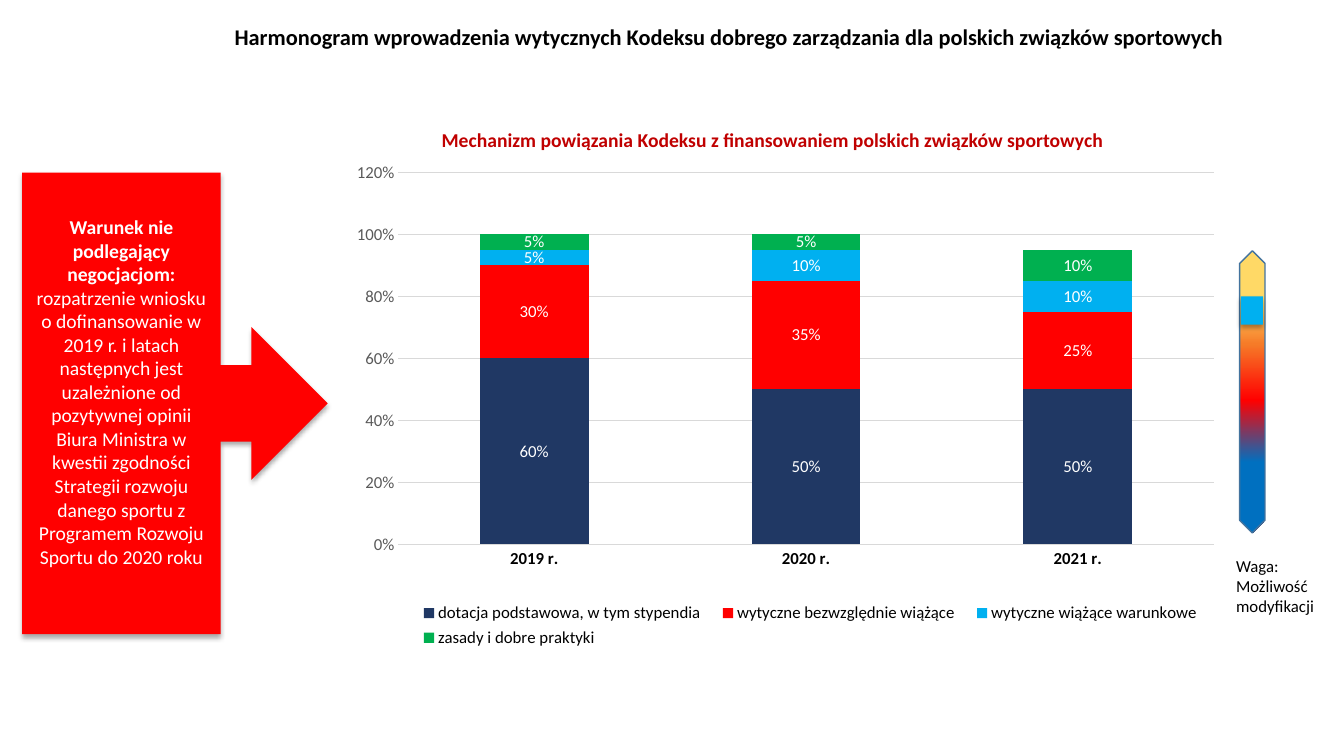
from pptx import Presentation
from pptx.chart.data import CategoryChartData
from pptx.dml.color import RGBColor
from pptx.enum.chart import XL_CHART_TYPE, XL_LEGEND_POSITION, XL_TICK_MARK
from pptx.enum.shapes import MSO_SHAPE
from pptx.enum.text import MSO_ANCHOR, PP_ALIGN
from pptx.oxml import parse_xml
from pptx.oxml.ns import nsdecls, qn
from pptx.util import Cm, Pt

STACKED = XL_CHART_TYPE.COLUMN_STACKED
LEGEND_BOTTOM = XL_LEGEND_POSITION.BOTTOM
NO_TICK = XL_TICK_MARK.NONE
CALLOUT = MSO_SHAPE.RIGHT_ARROW_CALLOUT
DOUBLE_ARROW = MSO_SHAPE.UP_DOWN_ARROW
RECTANGLE = MSO_SHAPE.RECTANGLE
MIDDLE = MSO_ANCHOR.MIDDLE
CENTER = PP_ALIGN.CENTER

FONT = "Calibri"
BLACK, WHITE, RED, BLUE = "000000", "FFFFFF", "FF0000", "00B0F0"
GRID = "D9D9D9"

YEARS = ["2019 r.", "2020 r.", "2021 r."]
SHARES = [
    ("dotacja podstawowa, w tym stypendia", "203864", (0.6, 0.5, 0.5)),
    ("wytyczne bezwzględnie wiążące", RED, (0.3, 0.35, 0.25)),
    ("wytyczne wiążące warunkowe", BLUE, (0.05, 0.1, 0.1)),
    ("zasady i dobre praktyki", "00B050", (0.05, 0.05, 0.1)),
]
WEIGHT_STOPS = [(18, "FFD966"), (33, "F67B28"), (53, RED), (75, "0070C0")]


def color(hex_string):
    return RGBColor.from_string(hex_string)


def style_font(font, size, hex_color, bold=False):
    font.name = FONT
    font.size = Pt(size)
    font.bold = bold
    font.color.rgb = color(hex_color)


def add_span(para, text, size, hex_color, bold=False):
    span = para.add_run()
    span.text = text
    style_font(span.font, size, hex_color, bold)


def place(shape, left, top, width, height):
    shape.left, shape.top = Cm(left), Cm(top)
    shape.width, shape.height = Cm(width), Cm(height)


def add_title(page, text):
    title = page.shapes.title
    place(title, 3.25, 0.25, 30.25, 1.42)
    title.text_frame.vertical_anchor = MIDDLE
    title.text_frame.word_wrap = True
    para = title.text_frame.paragraphs[0]
    para.alignment = CENTER
    para.line_spacing = 0.9
    add_span(para, text, 16, BLACK, True)


def add_text(page, bounds, lines, size, hex_color, bold=False):
    box = page.shapes.add_textbox(*map(Cm, bounds))
    frame = box.text_frame
    frame.word_wrap = True
    for index, line in enumerate(lines):
        para = frame.add_paragraph() if index else frame.paragraphs[0]
        add_span(para, line, size, hex_color, bold)


def add_block(page, kind, bounds, fill):
    """Solid shape without outline, with a soft shadow below it."""
    block = page.shapes.add_shape(kind, *map(Cm, bounds))
    block.fill.solid()
    block.fill.fore_color.rgb = color(fill)
    block.line.fill.background()
    block._element.spPr.append(parse_xml(
        f'<a:effectLst {nsdecls("a")}>'
        '<a:outerShdw blurRad="44450" dist="27940" dir="5400000" rotWithShape="0">'
        '<a:srgbClr val="000000"><a:alpha val="32000"/></a:srgbClr>'
        '</a:outerShdw></a:effectLst>'))
    return block


def add_condition(page):
    callout = add_block(page, CALLOUT, (0.56, 4.35, 7.7, 11.63), RED)
    frame = callout.text_frame
    frame.word_wrap = True
    frame.vertical_anchor = MIDDLE
    frame.margin_bottom = Cm(0.72)
    para = frame.paragraphs[0]
    para.alignment = CENTER
    add_span(para, "Warunek nie podlegający negocjacjom: ", 14, WHITE, True)
    add_span(para, "rozpatrzenie wniosku o dofinansowanie w 2019 r. i latach "
             "następnych jest uzależnione od pozytywnej opinii Biura Ministra "
             "w kwestii zgodności Strategii rozwoju danego sportu z Programem "
             "Rozwoju Sportu do 2020 roku", 14, WHITE)


def add_weight_arrow(page):
    arrow = page.shapes.add_shape(DOUBLE_ARROW, *map(Cm, (31.24, 6.32, 0.64, 7.11)))
    arrow.shadow.inherit = False
    arrow.adjustments[0], arrow.adjustments[1] = 0.5, 1.02
    arrow.line.color.rgb = color("43739E")
    arrow.line.width = Pt(1)
    stops = "".join(f'<a:gs pos="{percent * 1000}"><a:srgbClr val="{tone}"/></a:gs>'
                    for percent, tone in WEIGHT_STOPS)
    arrow._element.spPr.find(qn("a:prstGeom")).addnext(parse_xml(
        f'<a:gradFill {nsdecls("a")} rotWithShape="1"><a:gsLst>{stops}</a:gsLst>'
        '<a:lin ang="5400000" scaled="0"/></a:gradFill>'))


def set_layout(element, index, x, y, width, height, inner=False):
    """Fix the place of a chart part, in fractions of the chart."""
    for old in element.findall(qn("c:layout")):
        element.remove(old)
    target = '<c:layoutTarget val="inner"/>' if inner else ""
    element.insert(index, parse_xml(
        f'<c:layout {nsdecls("c")}><c:manualLayout>{target}'
        '<c:xMode val="edge"/><c:yMode val="edge"/>'
        f'<c:x val="{x}"/><c:y val="{y}"/><c:w val="{width}"/><c:h val="{height}"/>'
        '</c:manualLayout></c:layout>'))


def style_axes(chart):
    years, percents = chart.category_axis, chart.value_axis
    for axis in (years, percents):
        axis.major_tick_mark = axis.minor_tick_mark = NO_TICK
    style_font(years.tick_labels.font, 12, BLACK, True)
    years.format.line.color.rgb = color(GRID)
    years.format.line.width = Pt(0.75)

    style_font(percents.tick_labels.font, 12, "595959")
    percents.tick_labels.number_format = "0%"
    percents.tick_labels.number_format_is_linked = False
    percents.minimum_scale, percents.maximum_scale = 0, 1.2
    percents.major_unit = 0.2
    percents.format.line.fill.background()
    percents.major_gridlines.format.line.color.rgb = color(GRID)
    percents.major_gridlines.format.line.width = Pt(0.75)


def add_share_chart(page):
    data = CategoryChartData(number_format="0%")
    data.categories = YEARS
    for name, _, values in SHARES:
        data.add_series(name, values)
    bounds = map(Cm, (8.46, 3.53, 22.58, 13.59))
    chart = page.shapes.add_chart(STACKED, *bounds, data).chart
    chart.has_title = False
    style_font(chart.font, 10, BLACK)
    style_axes(chart)

    # Stacked columns and their labels
    plot = chart.plots[0]
    plot.gap_width, plot.overlap = 150, 100
    plot.vary_by_categories = False
    for series, (_, fill, _) in zip(plot.series, SHARES):
        series.format.fill.solid()
        series.format.fill.fore_color.rgb = color(fill)
        labels = series.data_labels
        labels.show_value = True
        labels.number_format = "0%"
        labels.number_format_is_linked = False
        style_font(labels.font, 12, WHITE)
    set_layout(plot._element.getparent(), 0, 0.07, 0.06, 0.91, 0.69, inner=True)

    # Legend
    chart.has_legend = True
    chart.legend.position = LEGEND_BOTTOM
    chart.legend.include_in_layout = False
    style_font(chart.legend.font, 12, BLACK)
    set_layout(chart.legend._element, 1, 0.08, 0.85, 0.9, 0.1)


def main():
    deck = Presentation()
    deck.slide_width, deck.slide_height = Cm(33.87), Cm(19.05)
    page = deck.slides.add_slide(deck.slide_layouts[5])

    # Headings
    add_title(page, "Harmonogram wprowadzenia wytycznych Kodeksu dobrego "
              "zarządzania dla polskich związków sportowych")
    add_text(page, (10.88, 3.1, 17.9, 0.86),
             ["Mechanizm powiązania Kodeksu z finansowaniem polskich związków sportowych"],
             14, "C00000", True)

    # Chart and the condition leading to it
    add_share_chart(page)
    add_condition(page)

    # Weight scale
    add_weight_arrow(page)
    add_block(page, RECTANGLE, (31.27, 7.47, 0.56, 0.71), BLUE)
    add_text(page, (30.9, 13.87, 2.59, 1.8), ["Waga:", "Możliwość modyfikacji"], 12, BLACK)

    deck.save("out.pptx")


if __name__ == "__main__":
    main()
